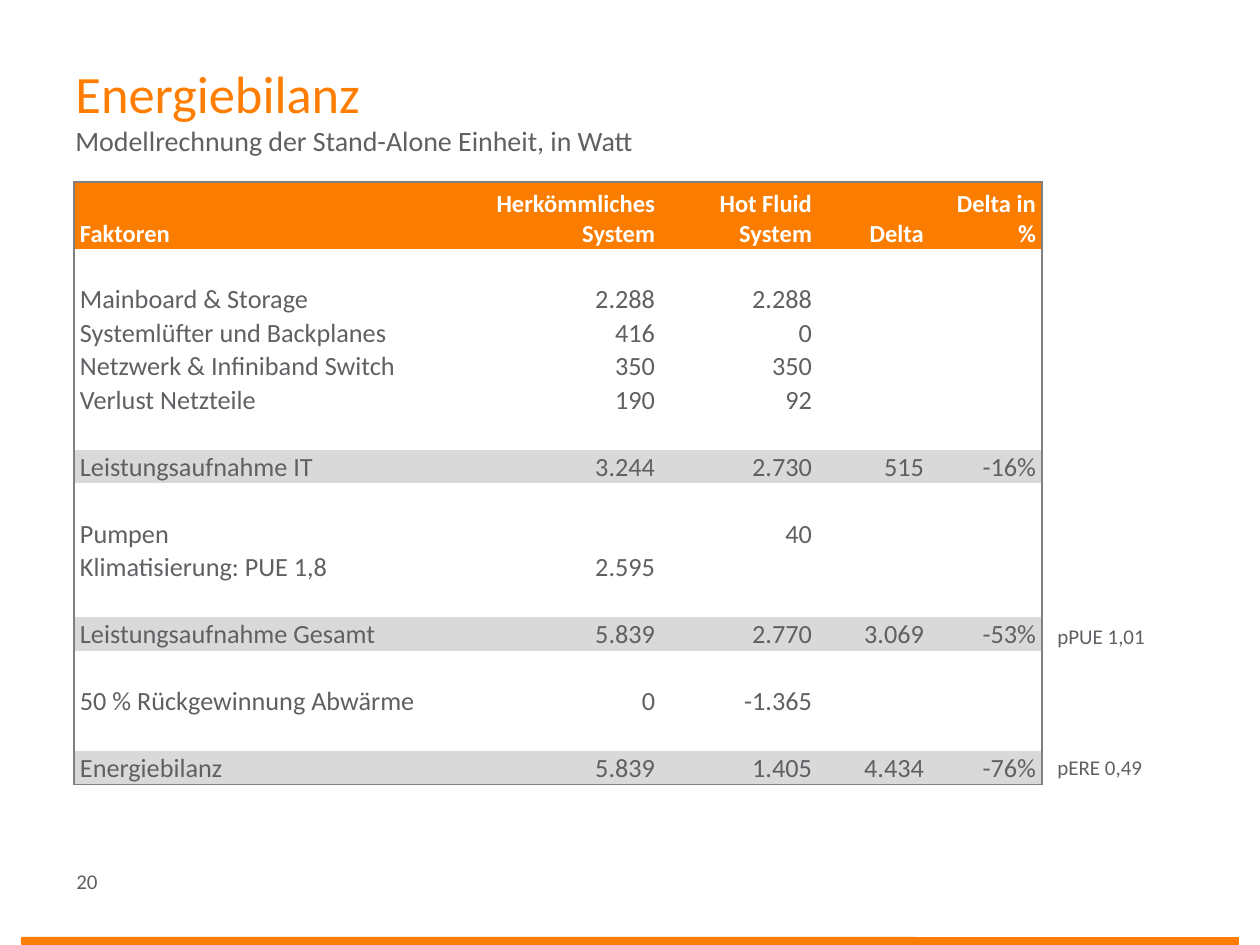
from dataclasses import dataclass

from pptx import Presentation
from pptx.dml.color import RGBColor
from pptx.enum.shapes import MSO_SHAPE
from pptx.enum.text import MSO_ANCHOR, MSO_AUTO_SIZE, PP_ALIGN
from pptx.oxml.xmlchemy import OxmlElement
from pptx.util import Emu, Pt

EMU_PER_PX = 914400 / 126
NO_STYLE = "{2D5ABB26-0587-4C30-8999-92F81FD0307C}"


@dataclass(frozen=True)
class Theme:
    font: str = "Calibri"
    accent: str = "FF7D00"
    header: str = "FA7D00"
    band: str = "D9D9D9"
    border: str = "808080"
    text: str = "5F6064"
    white: str = "FFFFFF"
    title_size: int = 30
    subtitle_size: int = 16
    body_size: int = 15
    header_size: int = 14
    note_size: int = 12


def px(length):
    return Emu(round(length * EMU_PER_PX))


class SlideBuilder:
    def __init__(self, slide, theme):
        self.slide = slide
        self.theme = theme

    def style(self, para, size, color, bold=False):
        para.font.name = self.theme.font
        para.font.size = Pt(size)
        para.font.bold = bold
        para.font.color.rgb = RGBColor.from_string(color)

    def text(self, words, left, top, width, height, size, color, wrap=True):
        box = self.slide.shapes.add_textbox(px(left), px(top), px(width), px(height))
        frame = box.text_frame
        frame.word_wrap = wrap
        frame.auto_size = MSO_AUTO_SIZE.SHAPE_TO_FIT_TEXT
        para = frame.paragraphs[0]
        para.text = words
        self.style(para, size, color)

    def bar(self, left, top, width, height):
        shape = self.slide.shapes.add_shape(
            MSO_SHAPE.ROUNDED_RECTANGLE, px(left), px(top), px(width), px(height))
        shape.shadow.inherit = False
        shape.fill.solid()
        shape.fill.fore_color.rgb = RGBColor.from_string(self.theme.accent)
        shape.line.fill.background()

    def border(self, cell, side):
        line = OxmlElement(f"a:ln{side}")
        line.set("w", str(Pt(1)))
        fill = OxmlElement("a:solidFill")
        color = OxmlElement("a:srgbClr")
        color.set("val", self.theme.border)
        fill.append(color)
        line.append(fill)
        cell._tc.get_or_add_tcPr().append(line)

    def cell(self, cell, words, size, color, fill, bold, align):
        cell.margin_left = cell.margin_right = px(6)
        cell.margin_top = cell.margin_bottom = 0
        cell.vertical_anchor = MSO_ANCHOR.BOTTOM
        if fill:
            cell.fill.solid()
            cell.fill.fore_color.rgb = RGBColor.from_string(fill)
        else:
            cell.fill.background()
        para = cell.text_frame.paragraphs[0]
        para.alignment = align
        self.style(para, size, color, bold)
        if words:
            para.text = words
        else:
            end = OxmlElement("a:endParaRPr")
            end.set("sz", str(size * 100))
            para._p.append(end)

    def table(self, rows, totals, left, top, widths, header_height, body_height):
        theme = self.theme
        last_row, last_column = len(rows) - 1, len(widths) - 1
        frame = self.slide.shapes.add_table(
            len(rows), len(widths), px(left), px(top),
            px(sum(widths)), px(header_height + body_height))
        table = frame.table
        table.first_row = table.horz_banding = False
        table._tbl.tblPr.find("{*}tableStyleId").text = NO_STYLE
        for column, width in zip(table.columns, widths):
            column.width = px(width)
        for r, values in enumerate(rows):
            is_header = r == 0
            table.rows[r].height = px(header_height if is_header else body_height / last_row)
            if is_header:
                look = theme.header_size, theme.white, theme.header, True
            else:
                fill = theme.band if values[0] in totals else None
                look = theme.body_size, theme.text, fill, False
            for c, words in enumerate(values):
                cell = table.cell(r, c)
                edges = {"L": c == 0, "R": c == last_column, "T": is_header, "B": r == last_row}
                for side, on_edge in edges.items():
                    if on_edge:
                        self.border(cell, side)
                self.cell(cell, words, *look, PP_ALIGN.RIGHT if c else PP_ALIGN.LEFT)


BLANK = ("",) * 5
ROWS = [
    ("Faktoren", "Herkömmliches System", "Hot Fluid System", "Delta", "Delta in %"),
    BLANK,
    ("Mainboard & Storage", "2.288", "2.288", "", ""),
    ("Systemlüfter und Backplanes", "416", "0", "", ""),
    ("Netzwerk & Infiniband Switch", "350", "350", "", ""),
    ("Verlust Netzteile", "190", "92", "", ""),
    BLANK,
    ("Leistungsaufnahme IT", "3.244", "2.730", "515", "-16%"),
    BLANK,
    ("Pumpen", "", "40", "", ""),
    ("Klimatisierung: PUE 1,8", "2.595", "", "", ""),
    BLANK,
    ("Leistungsaufnahme Gesamt", "5.839", "2.770", "3.069", "-53%"),
    BLANK,
    ("50 % Rückgewinnung Abwärme", "0", "-1.365", "", ""),
    BLANK,
    ("Energiebilanz", "5.839", "1.405", "4.434", "-76%"),
]
TOTALS = {"Leistungsaufnahme IT", "Leistungsaufnahme Gesamt", "Energiebilanz"}


def main():
    deck = Presentation()
    deck.slide_width, deck.slide_height = px(1260), px(945)
    theme = Theme()
    page = SlideBuilder(deck.slides.add_slide(deck.slide_layouts[6]), theme)
    page.text("20", 64, 862, 73, 38, theme.note_size, theme.text)
    page.bar(21, 937, 1218, 8)
    page.text("Energiebilanz", 63, 55, 864, 77, theme.title_size, theme.accent)
    page.table(ROWS, TOTALS, 74, 182, (387, 200, 157, 112, 112), 67, 536)
    page.text("Modellrechnung der Stand-Alone Einheit, in Watt",
              63, 117, 866, 47, theme.subtitle_size, theme.text)
    for words, top in (("pPUE 1,01", 617), ("pERE 0,49", 748)):
        page.text(words, 1045, top, 120, 38, theme.note_size, theme.text, wrap=False)
    deck.save("out.pptx")


if __name__ == "__main__":
    main()
